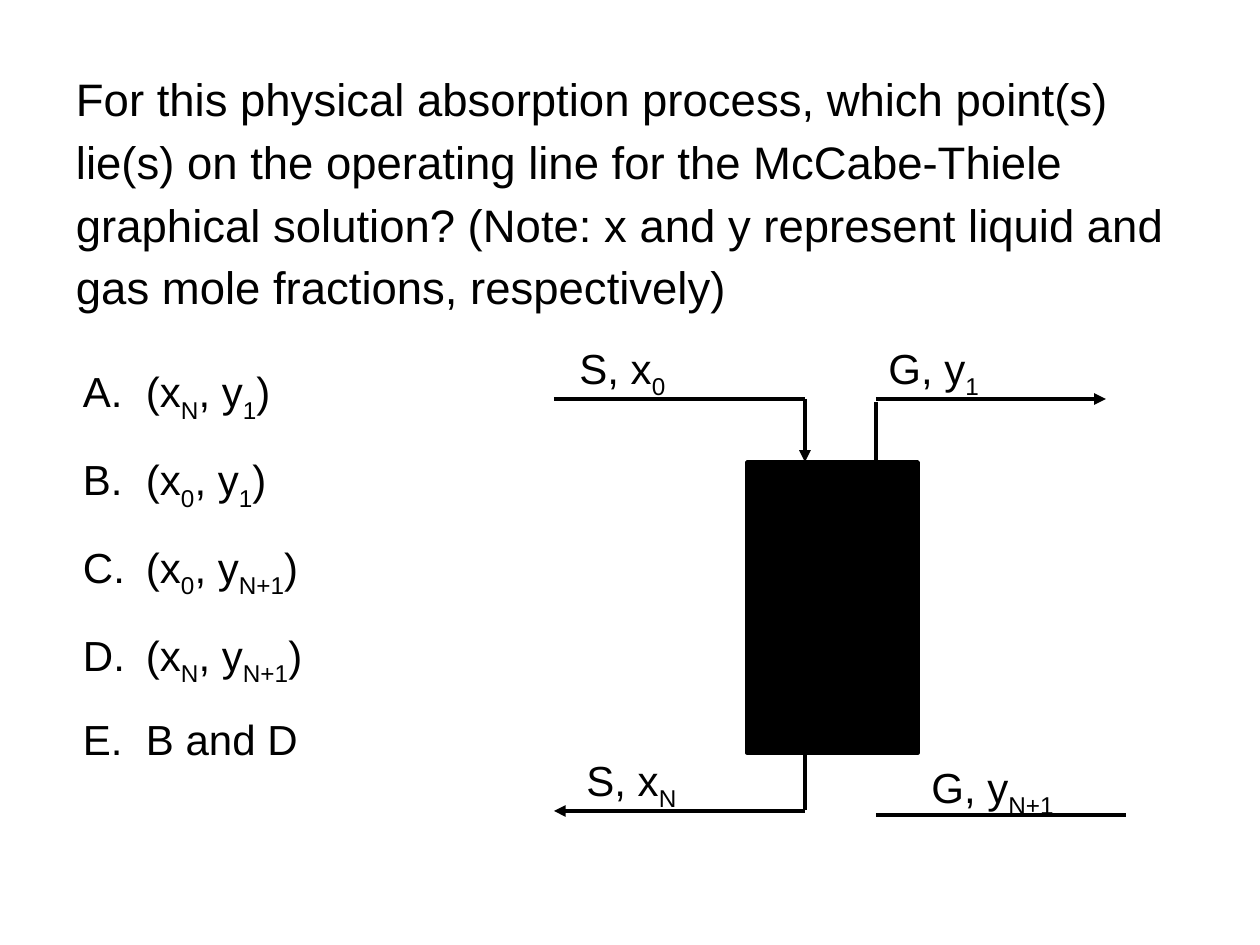
"""Build the absorption column quiz slide."""
import pptx
import pptx.dml.color
import pptx.enum.shapes
import pptx.oxml.ns
import pptx.util
from lxml import etree

SCALE = 914400 / 126
BLACK = "000000"
TITLE = ("For this physical absorption process, which point(s) lie(s) on the "
         "operating line for the McCabe-Thiele graphical solution? (Note: x and y "
         "represent liquid and gas mole fractions, respectively)")
CHOICES = ["(x|N|, y|1|)", "(x|0|, y|1|)", "(x|0|, y|N+1|)",
           "(x|N|, y|N+1|)", "B and D"]
LEFT, INLET, OUTLET = 554, 805, 876
TOP, ROOF, FLOOR, BASE = 399, 462, 753, 811
PIPES = [
    (INLET, TOP, INLET, ROOF, True),
    (INLET, BASE, LEFT, BASE, True),
    (OUTLET, TOP, 1106, TOP, True),
    (OUTLET, 815, 1126, 815, False),
    (LEFT, TOP, INLET, TOP, False),
    (INLET, FLOOR, INLET, 810, False),
    (OUTLET, 402, OUTLET, 460, False),
]
LABELS = [("S, x|0", 567, 336, 268), ("S, x|N", 574, 748, 207),
          ("G, y|1", 876, 336, 268), ("G, y|N+1", 919, 755, 268)]


def px(size):
    """Turn pixels into EMU."""
    return pptx.util.Emu(round(size * SCALE))


def paint(code):
    """Turn a hex string into a colour."""
    return pptx.dml.color.RGBColor.from_string(code)


def add_sub(parent, tag, **attrs):
    """Append a drawing element and return it."""
    return etree.SubElement(parent, pptx.oxml.ns.qn(tag), attrs)


def write(para, text, size):
    """Write text in which every second part between bars is a subscript."""
    for i, part in enumerate(text.split("|")):
        if not part:
            continue
        run = para.add_run()
        run.text = part
        run.font.name = "Arial"
        run.font.size = pptx.util.Pt(size)
        run.font.color.rgb = paint(BLACK)
        if i % 2:
            run.font._element.set("baseline", "-28000")


def add_box(slide, left, top, width, height, pad=(0, 0)):
    """Add a wrapping text box and return its frame."""
    box = slide.shapes.add_textbox(px(left), px(top), px(width), px(height))
    frame = box.text_frame
    frame.word_wrap = True
    frame.margin_left = frame.margin_right = pptx.util.Inches(pad[0])
    frame.margin_top = frame.margin_bottom = pptx.util.Inches(pad[1])
    return frame


def add_title(slide):
    """Add the question."""
    para = add_box(slide, 76, 63, 1108, 315).paragraphs[0]
    para.line_spacing = 1.15
    write(para, TITLE, 26)


def add_list(slide):
    """Add the lettered choices."""
    frame = add_box(slide, 83, 336, 425, 399)
    for i, text in enumerate(CHOICES):
        para = frame.add_paragraph() if i else frame.paragraphs[0]
        para.line_spacing = 1.5
        props = para._p.get_or_add_pPr()
        props.set("marL", str(px(63)))
        props.set("indent", str(-px(63)))
        add_sub(add_sub(props, "a:buClr"), "a:srgbClr", val=BLACK)
        add_sub(props, "a:buFont", typeface="Arial")
        add_sub(props, "a:buAutoNum", type="alphaUcPeriod")
        write(para, text, 24)


def add_tower(slide):
    """Add the black column."""
    kind = pptx.enum.shapes.MSO_SHAPE.RECTANGLE
    tower = slide.shapes.add_shape(
        kind, px(747), px(ROOF), px(171), px(FLOOR - ROOF))
    tower.shadow.inherit = False
    tower.fill.solid()
    tower.fill.fore_color.rgb = paint(BLACK)
    tower.line.color.rgb = paint(BLACK)
    tower.line.width = pptx.util.Pt(2)


def add_pipe(slide, x1, y1, x2, y2, arrow):
    """Add a straight pipe, with an arrowhead at its end if asked."""
    kind = pptx.enum.shapes.MSO_CONNECTOR.STRAIGHT
    pipe = slide.shapes.add_connector(kind, px(x1), px(y1), px(x2), px(y2))
    pipe.line.color.rgb = paint(BLACK)
    pipe.line.width = pptx.util.Pt(2.25)
    if arrow:
        add_sub(pipe.line._get_or_add_ln(), "a:tailEnd", type="triangle")
    add_sub(pipe._element.spPr, "a:effectLst")


def add_label(slide, text, left, top, width):
    """Add a stream label."""
    frame = add_box(slide, left, top, width, 71, (0.1, 0.05))
    write(frame.paragraphs[0], text, 24)


def main():
    """Build and save the slide."""
    deck = pptx.Presentation()
    deck.slide_width, deck.slide_height = px(1260), px(945)
    slide = deck.slides.add_slide(deck.slide_layouts[6])
    add_title(slide)
    add_list(slide)
    add_tower(slide)
    for pipe in PIPES:
        add_pipe(slide, *pipe)
    for label in LABELS:
        add_label(slide, *label)
    deck.save("out.pptx")


if __name__ == "__main__":
    main()
